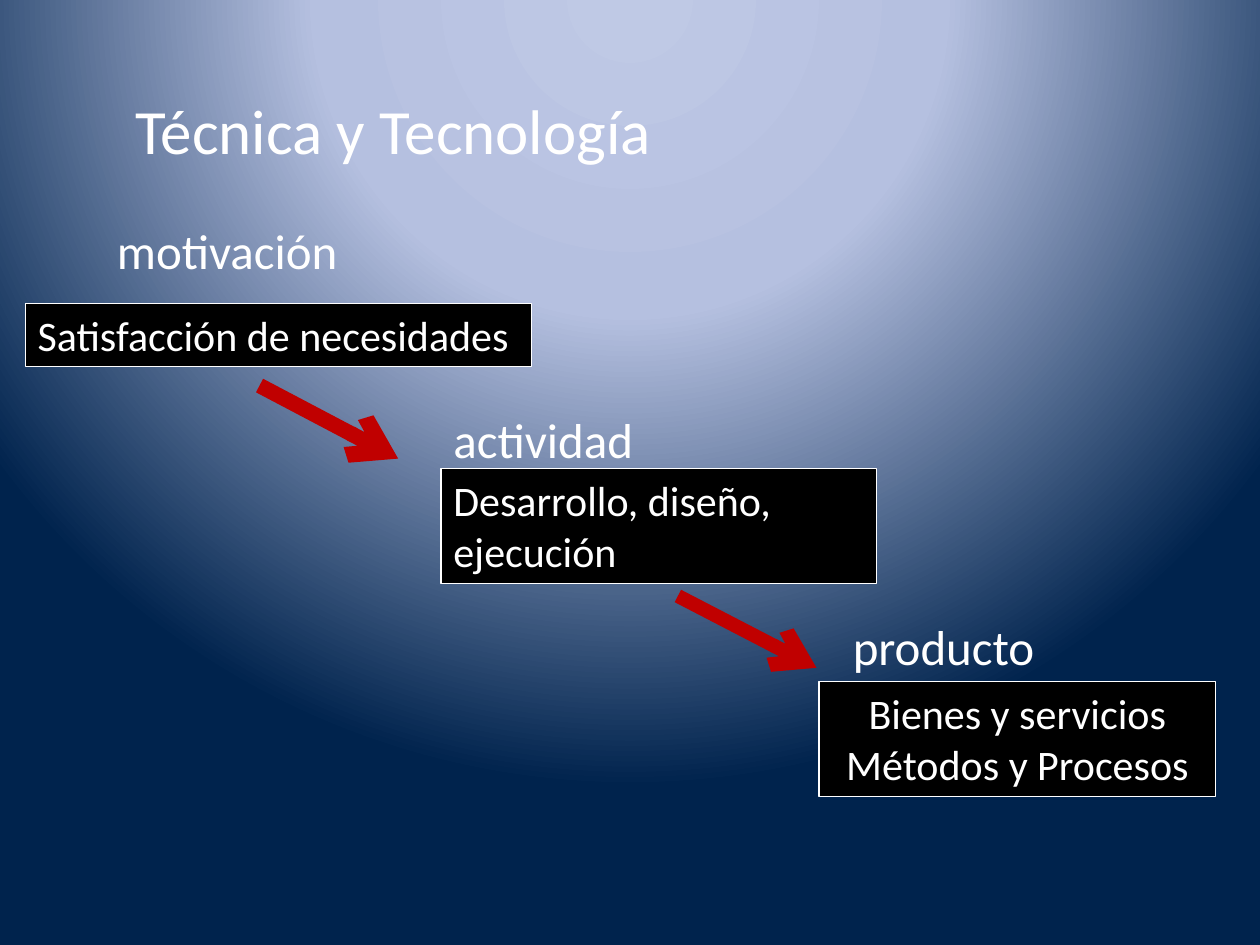
from pptx import Presentation
from pptx.dml.color import RGBColor
from pptx.enum.shapes import MSO_CONNECTOR, MSO_SHAPE
from pptx.enum.text import MSO_ANCHOR, MSO_AUTO_SIZE, PP_ALIGN
from pptx.oxml import parse_xml
from pptx.oxml.ns import nsdecls
from pptx.oxml.xmlchemy import OxmlElement
from pptx.util import Inches, Pt

FONT = "Calibri"
WHITE, BLACK, RED = "FFFFFF", "000000", "C00000"
GRADIENT = [(0, "BFC9E5"), (40, "B5C0E0"), (100, "00234D")]

# Each step: label, label box, lines of text, text box, alignment
STEPS = [
    ("motivación", (0.83, 1.7, 2.99, 0.57),
     ["Satisfacción de necesidades"], (0.2, 2.41, 4.02, 0.5), PP_ALIGN.LEFT),
    ("actividad", (3.5, 3.2, 2.99, 0.57),
     ["Desarrollo, diseño, ejecución"], (3.5, 3.72, 3.46, 0.91), PP_ALIGN.LEFT),
    ("producto", (6.67, 4.84, 2.6, 0.57),
     ["Bienes y servicios", "Métodos y Procesos"], (6.5, 5.41, 3.15, 0.91),
     PP_ALIGN.CENTER),
]
# Each arrow: start, end, width in points
ARROWS = [
    ((2.06, 3.06), (3.16, 3.64), 8.75),
    ((5.38, 4.73), (6.48, 5.3), 8),
]


def rgb(color):
    return RGBColor.from_string(color)


def write_text(sp, lines, size, color=WHITE, align=PP_ALIGN.LEFT):
    tf = sp.text_frame
    tf.word_wrap = True
    tf.auto_size = MSO_AUTO_SIZE.SHAPE_TO_FIT_TEXT
    tf.vertical_anchor = MSO_ANCHOR.TOP
    for i, line in enumerate(lines):
        p = tf.paragraphs[0] if i == 0 else tf.add_paragraph()
        p.alignment = align
        r = p.add_run()
        r.text = line
        r.font.name = FONT
        r.font.size = Pt(size)
        r.font.color.rgb = rgb(color)


def add_background(s):
    stops = "".join(
        f'<a:gs pos="{pos * 1000}"><a:srgbClr val="{color}"/></a:gs>'
        for pos, color in GRADIENT)
    bg = parse_xml(
        f'<p:bg {nsdecls("p", "a")}><p:bgPr><a:gradFill rotWithShape="1">'
        f'<a:gsLst>{stops}</a:gsLst><a:path path="circle">'
        '<a:fillToRect l="50000" t="-80000" r="50000" b="180000"/></a:path>'
        '</a:gradFill><a:effectLst/></p:bgPr></p:bg>')
    s.element.cSld.insert(0, bg)


def add_label(s, box, text, size):
    sp = s.shapes.add_textbox(*map(Inches, box))
    write_text(sp, [text], size)


def add_step(s, label, label_box, lines, box, align):
    sp = s.shapes.add_shape(MSO_SHAPE.RECTANGLE, *map(Inches, box))
    sp.shadow.inherit = False
    sp.fill.solid()
    sp.fill.fore_color.rgb = rgb(BLACK)
    sp.line.color.rgb = rgb(WHITE)
    sp.line.width = Pt(0.75)
    write_text(sp, lines, 24, align=align)
    add_label(s, label_box, label, 28)


def add_arrow(s, start, end, width):
    cx = s.shapes.add_connector(MSO_CONNECTOR.STRAIGHT,
                                *map(Inches, start + end))
    cx.line.color.rgb = rgb(RED)
    cx.line.width = Pt(width)
    head = OxmlElement("a:tailEnd")
    head.set("type", "arrow")
    cx.line._get_or_add_ln().append(head)
    cx._element.spPr.append(OxmlElement("a:effectLst"))


def main():
    prs = Presentation()
    prs.slide_width, prs.slide_height = Inches(10), Inches(7.5)
    s = prs.slides.add_slide(prs.slide_layouts[6])
    add_background(s)
    # Title
    add_label(s, (0.98, 0.68, 8.11, 0.71), "Técnica y Tecnología", 36)
    # Descending steps and the arrows between them
    for step in STEPS:
        add_step(s, *step)
    for arrow in ARROWS:
        add_arrow(s, *arrow)
    prs.save("out.pptx")


if __name__ == "__main__":
    main()
